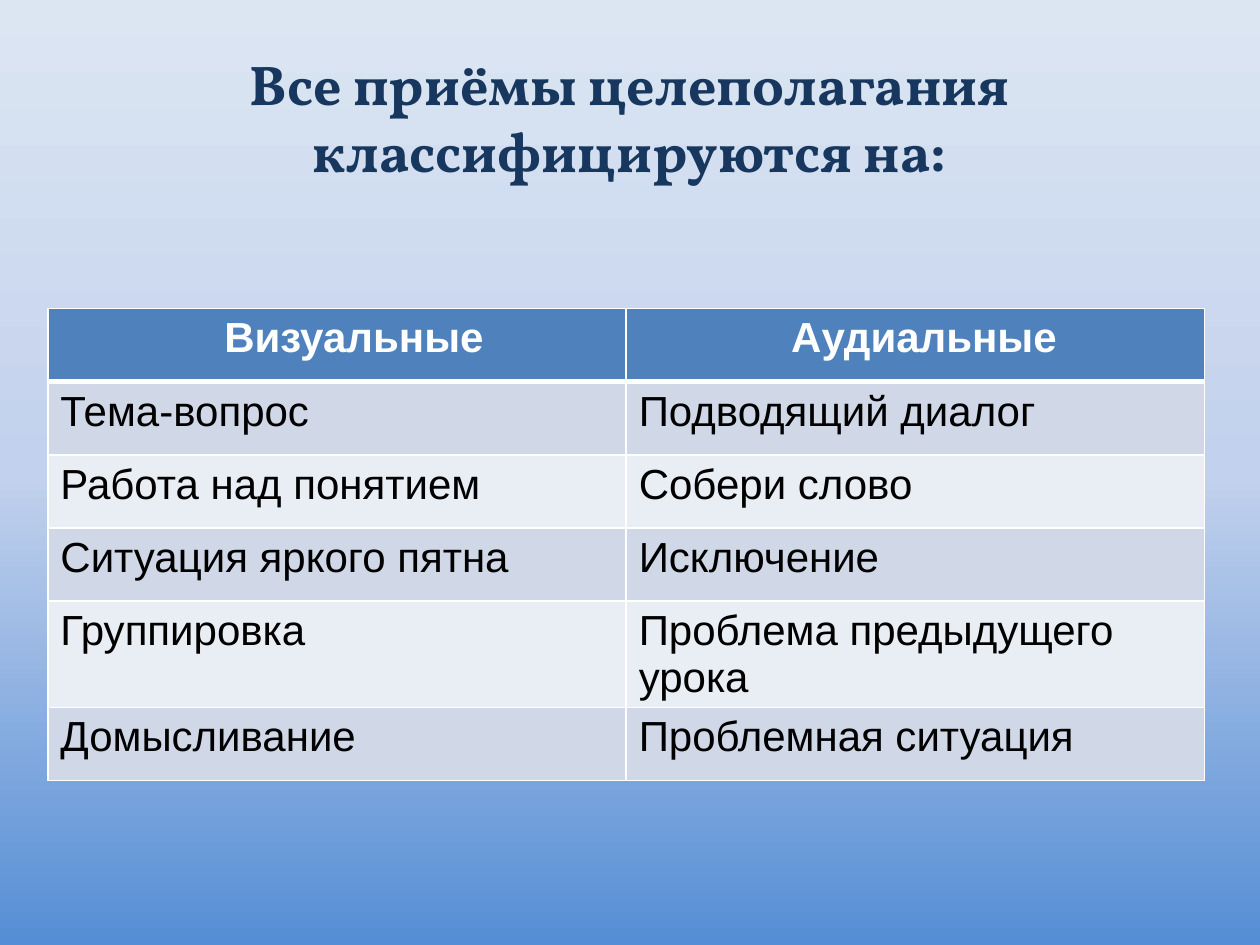
"""Build a slide with a table of visual and auditory goal-setting techniques."""
from copy import deepcopy
from dataclasses import dataclass

from lxml.etree import SubElement
from pptx import Presentation
from pptx.dml.color import RGBColor as RGB
from pptx.enum.text import MSO_ANCHOR, PP_ALIGN
from pptx.oxml.ns import qn
from pptx.util import Inches, Pt


@dataclass(frozen=True)
class Theme:
    title: str = "17375E"
    header: str = "4F81BD"
    bands: tuple = ("D0D8E8", "E9EDF4")
    light: str = "FFFFFF"
    dark: str = "000000"
    background: tuple = ("DCE6F2", "C2D1ED", "558ED5")
    title_font: str = "Vollkorn"
    body_font: str = "Arial"
    title_size: int = 32
    body_size: int = 24


THEME = Theme()
ROWS = [
    ("Визуальные", "Аудиальные"),
    ("Тема-вопрос", "Подводящий диалог"),
    ("Работа над понятием", "Собери слово"),
    ("Ситуация яркого пятна", "Исключение"),
    ("Группировка", "Проблема предыдущего урока"),
    ("Домысливание", "Проблемная ситуация"),
]
HEADER_INSETS = (1.4, 1.31)


def style_text(tf, font, size, color, bold):
    for p in tf.paragraphs:
        for r in p.runs:
            r.font.name = font
            r.font.size = Pt(size)
            r.font.bold = bold
            r.font.color.rgb = RGB.from_string(color)


def add_border(cell, side, width):
    ln = SubElement(cell._tc.get_or_add_tcPr(), qn(f"a:ln{side}"), w=str(Pt(width)))
    fill = SubElement(ln, qn("a:solidFill"))
    SubElement(fill, qn("a:srgbClr"), val=THEME.light)


prs = Presentation()
prs.slide_width, prs.slide_height = Inches(10), Inches(7.5)
s = prs.slides.add_slide(prs.slide_layouts[5])

fill = s.background.fill
fill.gradient()
fill.gradient_angle = 270
stop_list = s.element.find(".//" + qn("a:gsLst"))
stop_list.append(deepcopy(stop_list[-1]))
for i, color in enumerate(THEME.background):
    stop = fill.gradient_stops[i]
    stop.position = i / 2
    stop.color.rgb = RGB.from_string(color)

title = s.shapes.title
title.left, title.top = Inches(0.5), Inches(0.3)
title.width, title.height = Inches(9), Inches(1.25)
tf = title.text_frame
tf.text = "Все приёмы целеполагания классифицируются на:"
tf.vertical_anchor = MSO_ANCHOR.MIDDLE
tf.paragraphs[0].alignment = PP_ALIGN.CENTER
style_text(tf, THEME.title_font, THEME.title_size, THEME.title, True)

table = s.shapes.add_table(
    len(ROWS), 2, Inches(0.38), Inches(2.45), Inches(9.18), Inches(0.58 * len(ROWS))
).table
for i, row in enumerate(ROWS):
    table.rows[i].height = Inches(0.58)
    is_header = i == 0
    for j, text in enumerate(row):
        cell = table.cell(i, j)
        cell.text = text
        if is_header:
            cell.margin_left = Inches(HEADER_INSETS[j])
        style_text(cell.text_frame, THEME.body_font, THEME.body_size,
                   THEME.light if is_header else THEME.dark, is_header)
        for side in "LRTB":
            thick = (side == "B" and i == 0) or (side == "T" and i == 1)
            add_border(cell, side, 3 if thick else 1)
        cell.fill.solid()
        cell.fill.fore_color.rgb = RGB.from_string(
            THEME.header if is_header else THEME.bands[(i - 1) % 2])

prs.save("out.pptx")
